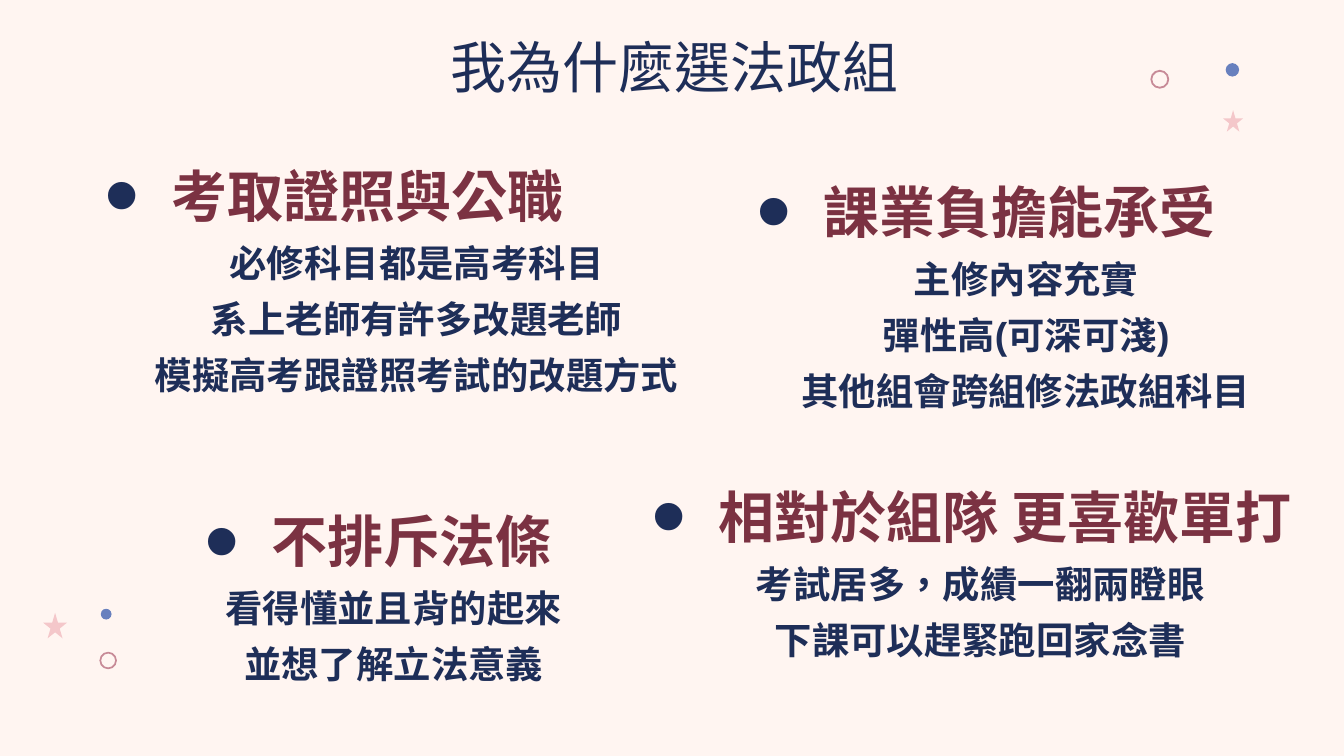
from lxml import etree
from pptx import Presentation
from pptx import util as u
from pptx.dml.color import RGBColor
from pptx.enum import shapes, text
from pptx.oxml.ns import qn

CREAM = RGBColor(0xFF, 0xF5, 0xF1)
NAVY = RGBColor(0x1E, 0x2E, 0x58)
WINE = RGBColor(0x7B, 0x32, 0x42)
ROSE = RGBColor(0xC7, 0x8A, 0x97)
BLUE = RGBColor(0x68, 0x80, 0xBE)
PINK = RGBColor(0xF4, 0xC7, 0xCA)
CJK_TC = "Noto Sans CJK TC"
CJK_JP = "Noto Sans CJK JP"
RING = shapes.MSO_SHAPE.DONUT
DOT = shapes.MSO_SHAPE.OVAL
STAR = shapes.MSO_SHAPE.STAR_5_POINT

FLAT, HANGING = (0.15, 0), (0.5, -0.35)
REASONS = [
    ((0.53, 1.1, 4.99, 1.99), "Arial", 0.1, "考取證照與公職",
     [("必修科目都是高考科目", FLAT), ("系上老師有許多改題老師", FLAT),
      ("模擬高考跟證照考試的改題方式", HANGING)]),
    ((5.38, 1.22, 4.36, 2.13), "Arial", 0.1, "課業負擔能承受",
     [("主修內容充實", FLAT), ("彈性高(可深可淺)", FLAT),
      ("其他組會跨組修法政組科目", FLAT)]),
    ((1.27, 3.72, 3.17, 1.45), CJK_TC, 0.05, "不排斥法條",
     [("看得懂並且背的起來", HANGING), ("並想了解立法意義", HANGING)]),
    ((4.6, 3.49, 5.24, 1.51), "Arial", 0.1, "相對於組隊 更喜歡單打",
     [("考試居多，成績一翻兩瞪眼", HANGING), ("下課可以趕緊跑回家念書", HANGING)]),
]
ORNAMENTS = [
    (RING, ROSE, (8.56, 0.52, 0.14, 0.14)),
    (RING, ROSE, (0.74, 4.85, 0.13, 0.13)),
    (DOT, BLUE, (0.75, 4.53, 0.08, 0.08)),
    (DOT, BLUE, (9.12, 0.47, 0.1, 0.1)),
    (STAR, PINK, (9.1, 0.82, 0.15, 0.16)),
    (STAR, PINK, (0.32, 4.56, 0.18, 0.19)),
]


class Deck:
    def __init__(self):
        self.prs = Presentation()
        self.prs.slide_width = u.Inches(10)
        self.prs.slide_height = u.Inches(10) * 9 // 16
        self.s = self.prs.slides.add_slide(self.prs.slide_layouts[5])
        self.s.background.fill.solid()
        self.s.background.fill.fore_color.rgb = CREAM

    def frame(self, sp, inset):
        tf = sp.text_frame
        tf.word_wrap = True
        tf.vertical_anchor = text.MSO_ANCHOR.TOP
        tf.margin_left = tf.margin_right = u.Inches(0.1)
        tf.margin_top = tf.margin_bottom = u.Inches(inset)
        return tf

    def style(self, p, size, color, latin, east, bold):
        for r in p.runs:
            r.font.size, r.font.bold, r.font.name = u.Pt(size), bold, latin
            r.font.color.rgb = color
            r.font._element.set("lang", "zh-TW")
            ea = etree.Element(qn("a:ea"), typeface=east)
            r.font._element.find(qn("a:latin")).addnext(ea)

    def indent(self, p, left, first):
        pPr = p._p.get_or_add_pPr()
        pPr.set("marL", str(u.Inches(left)))
        pPr.set("indent", str(u.Inches(first)))
        return pPr

    def bullet(self, pPr):
        color = etree.SubElement(pPr, qn("a:buClr"))
        etree.SubElement(color, qn("a:srgbClr"), val=str(NAVY))
        etree.SubElement(pPr, qn("a:buSzPct"), val="180000")
        etree.SubElement(pPr, qn("a:buFont"), typeface="Arial")
        etree.SubElement(pPr, qn("a:buChar"), char="•")

    def title(self, words, box):
        sp = self.s.shapes.title
        sp.left, sp.top, sp.width, sp.height = map(u.Inches, box)
        tf = self.frame(sp, 0.1)
        tf.auto_size = text.MSO_AUTO_SIZE.NONE
        tf.text = words
        p = tf.paragraphs[0]
        p.alignment = text.PP_ALIGN.CENTER
        self.style(p, 30, NAVY, CJK_JP, CJK_JP, False)

    def ornament(self, kind, color, box):
        sp = self.s.shapes.add_shape(kind, *map(u.Inches, box))
        sp.shadow.inherit = False
        sp.fill.solid()
        sp.fill.fore_color.rgb = color
        sp.line.fill.background()
        if kind == RING:
            sp.adjustments[0] = 0.1

    def reason(self, box, font, inset, heading, details):
        sp = self.s.shapes.add_textbox(*map(u.Inches, box))
        tf = self.frame(sp, inset)
        tf.text = heading
        p = tf.paragraphs[0]
        self.style(p, 30, WINE, font, CJK_TC, True)
        self.bullet(self.indent(p, 0.65, -0.5))
        for words, margins in details:
            p = tf.add_paragraph()
            p.text = words
            p.alignment = text.PP_ALIGN.CENTER
            p.space_before = u.Pt(6)
            self.indent(p, *margins)
            self.style(p, 20, NAVY, font, CJK_TC, True)


def main():
    deck = Deck()
    deck.title("我為什麼選法政組", (0.81, 0.14, 8.42, 0.63))
    for ornament in ORNAMENTS:
        deck.ornament(*ornament)
    for reason in REASONS:
        deck.reason(*reason)
    deck.prs.save("out.pptx")


if __name__ == "__main__":
    main()
